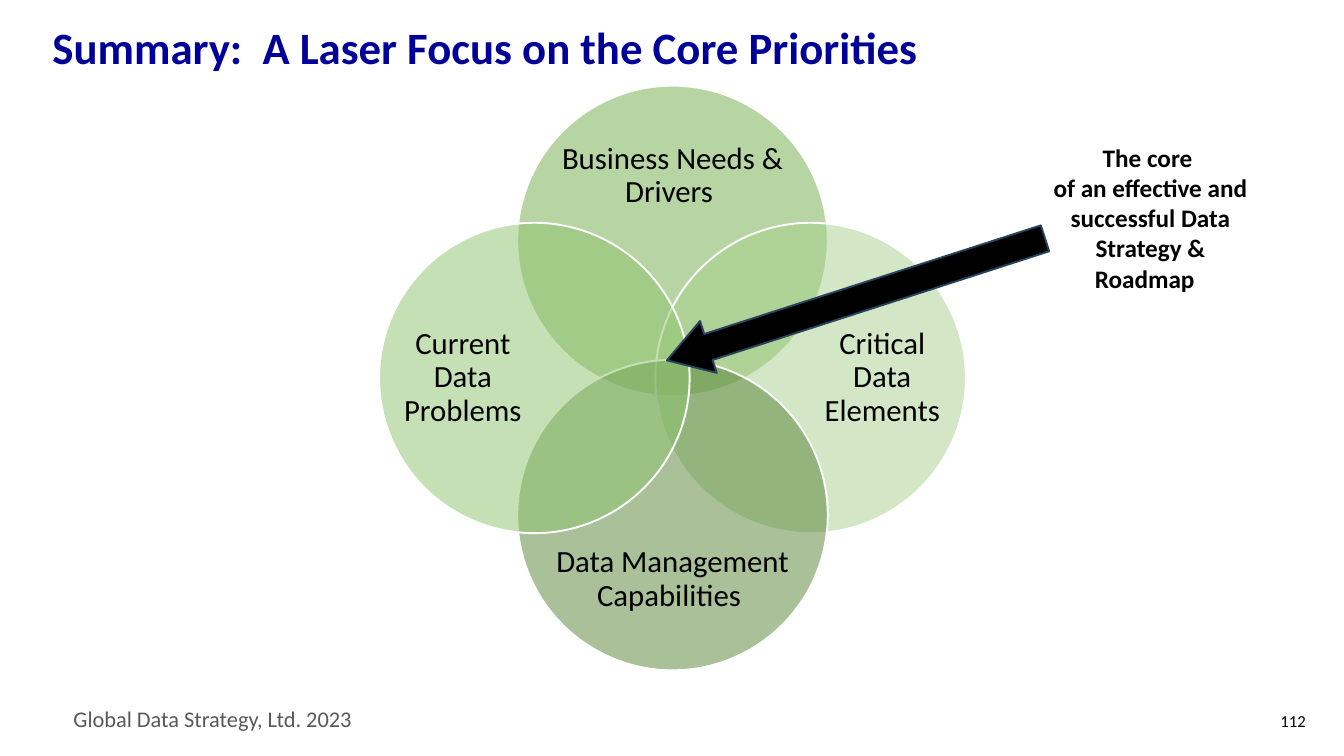
from dataclasses import dataclass

from lxml.etree import SubElement
from pptx import Presentation
from pptx.dml.color import RGBColor
from pptx.enum.shapes import MSO_SHAPE
from pptx.enum.text import MSO_ANCHOR, PP_ALIGN
from pptx.oxml.ns import qn
from pptx.shapes.autoshape import Shape
from pptx.slide import Slide
from pptx.text.text import TextFrame
from pptx.util import Inches, Pt

NAVY = RGBColor(0x00, 0x00, 0x99)
BLACK = RGBColor(0x00, 0x00, 0x00)
WHITE = RGBColor(0xFF, 0xFF, 0xFF)
GRAY = RGBColor(0x59, 0x59, 0x59)
STEEL = RGBColor(0x28, 0x44, 0x5D)
GREEN = RGBColor(0x70, 0xAD, 0x47)
PALE = RGBColor(0xA9, 0xD1, 0x8E)
MOSS = RGBColor(0x54, 0x82, 0x35)
LEAF = RGBColor(0x8F, 0xC3, 0x6F)

FONT = "Calibri"
MID_X, MID_Y = 6.67, 3.75
SIZE = 3.08
STEP_X, STEP_Y = 1.37, 1.36
TEXT_X, TEXT_Y = 2.08, 2.0
WIDE = (2.37, 0.98)
TALL = (1.19, 2.37)


@dataclass(frozen=True)
class Circle:
    text: str
    color: RGBColor
    across: int
    down: int


@dataclass(frozen=True)
class Style:
    size: float
    color: RGBColor = BLACK
    bold: bool = False
    align: PP_ALIGN = PP_ALIGN.LEFT
    anchor: MSO_ANCHOR = MSO_ANCHOR.TOP
    spacing: float = 1.0


CIRCLES = [
    Circle("Business Needs & Drivers ", GREEN, 0, -1),
    Circle("Critical Data Elements ", PALE, 1, 0),
    Circle("Data Management Capabilities ", MOSS, 0, 1),
    Circle("Current Data Problems ", LEAF, -1, 0),
]

TITLE = Style(32, NAVY, True, anchor=MSO_ANCHOR.MIDDLE, spacing=0.9)
FOOTER = Style(16, GRAY)
NUMBER = Style(12, align=PP_ALIGN.RIGHT, anchor=MSO_ANCHOR.MIDDLE)
LABEL = Style(22, align=PP_ALIGN.CENTER, anchor=MSO_ANCHOR.MIDDLE, spacing=0.9)
CALLOUT = Style(18, bold=True, align=PP_ALIGN.CENTER)


def write(frame: TextFrame, lines: list[str], style: Style) -> None:
    frame.word_wrap = True
    frame.vertical_anchor = style.anchor
    for i, line in enumerate(lines):
        para = frame.add_paragraph() if i else frame.paragraphs[0]
        para.alignment = style.align
        para.line_spacing = style.spacing
        para.space_before = Pt(0)
        run = para.add_run()
        run.text = line
        run.font.name = FONT
        run.font.size = Pt(style.size)
        run.font.bold = style.bold
        run.font.color.rgb = style.color


def add_text(slide: Slide, left: float, top: float, width: float, height: float,
             lines: list[str], style: Style) -> TextFrame:
    box = slide.shapes.add_textbox(
        Inches(left), Inches(top), Inches(width), Inches(height))
    write(box.text_frame, lines, style)
    return box.text_frame


def add_shape(slide: Slide, kind: MSO_SHAPE, left: float, top: float, width: float,
              height: float, fill: RGBColor, line: RGBColor) -> Shape:
    shape = slide.shapes.add_shape(
        kind, Inches(left), Inches(top), Inches(width), Inches(height))
    shape.shadow.inherit = False
    shape.fill.solid()
    shape.fill.fore_color.rgb = fill
    shape.line.color.rgb = line
    shape.line.width = Pt(1.35)
    return shape


def add_circle(slide: Slide, circle: Circle) -> None:
    """Draw a half-transparent circle and its label on the outer side."""
    left = MID_X + circle.across * STEP_X - SIZE / 2
    top = MID_Y + circle.down * STEP_Y - SIZE / 2
    disc = add_shape(slide, MSO_SHAPE.OVAL, left, top, SIZE, SIZE, circle.color, WHITE)
    color = disc.fill._xPr.find(qn("a:solidFill"))[0]
    SubElement(color, qn("a:alpha"), val="50000")

    width, height = TALL if circle.across else WIDE
    frame = add_text(
        slide,
        MID_X + circle.across * TEXT_X - width / 2,
        MID_Y + circle.down * TEXT_Y - height / 2,
        width, height, [circle.text], LABEL)
    frame.margin_left = frame.margin_right = 0
    frame.margin_top = frame.margin_bottom = 0


def main() -> None:
    deck = Presentation()
    deck.slide_width, deck.slide_height = Inches(13.33), Inches(7.5)
    slide = deck.slides.add_slide(deck.slide_layouts[5])

    title = slide.shapes.title
    title.left, title.top = Inches(0.42), Inches(0.16)
    title.width, title.height = Inches(11.5), Inches(0.68)
    write(title.text_frame, ["Summary:  A Laser Focus on the Core Priorities"], TITLE)

    add_text(slide, 0.63, 6.95, 3.62, 0.37, ["Global Data Strategy, Ltd. 2023"], FOOTER)
    add_text(slide, 12.42, 6.95, 0.63, 0.4, ["112"], NUMBER)

    for circle in CIRCLES:
        add_circle(slide, circle)

    arrow = add_shape(slide, MSO_SHAPE.LEFT_ARROW, 6.52, 2.7, 3.94, 0.54, BLACK, STEEL)
    arrow.rotation = 342.1
    arrow.adjustments[0] = 0.5
    arrow.adjustments[1] = 0.8

    add_text(slide, 10.35, 1.36, 2.12, 1.62, [
        "The core ",
        "of an effective and successful Data Strategy & Roadmap  ",
    ], CALLOUT)

    deck.save("out.pptx")


if __name__ == "__main__":
    main()
